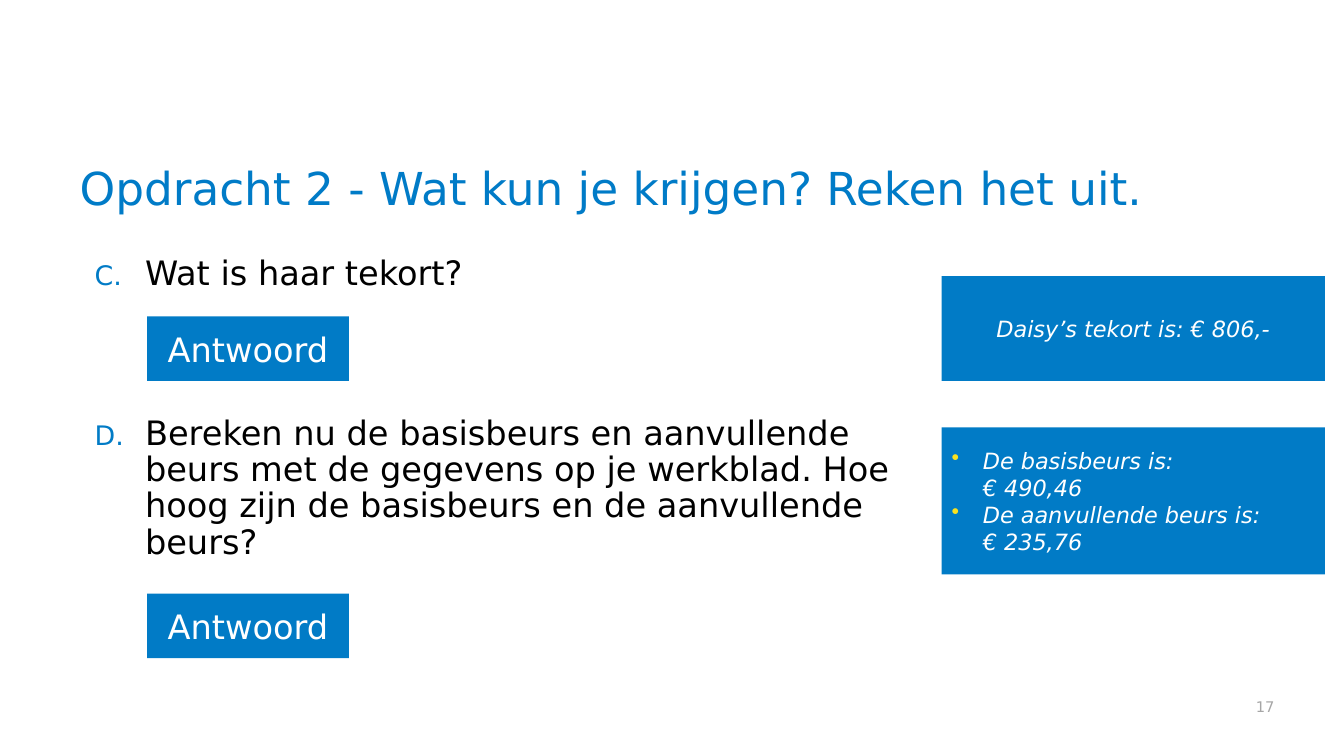
from dataclasses import dataclass

from lxml import etree
from pptx import Presentation
from pptx import util as u
from pptx.dml.color import RGBColor
from pptx.enum import shapes, text
from pptx.oxml.ns import qn

PX = 9144  # EMU per px, 100 px to the inch
FONT = "DejaVu Sans"
COLORS = {
    "title": "007BC7",
    "blue": "017BC6",
    "yellow": "F9E11E",
    "black": "000000",
    "white": "FFFFFF",
    "gray": "A6A6A6",
}
MID = text.PP_ALIGN.CENTER
LEFT = text.PP_ALIGN.LEFT


@dataclass
class Box:
    x: int
    y: int
    w: int
    h: int


@dataclass
class Panel:
    box: Box
    lines: list[str]
    size: int
    italic: bool = False
    bullet: bool = False


PANELS = [
    Panel(Box(146, 314, 200, 64), ["Antwoord"], 24),
    Panel(Box(146, 589, 200, 64), ["Antwoord"], 24),
    Panel(Box(934, 424, 380, 146),
          ["De basisbeurs is:\n€ 490,46", "De aanvullende beurs is:\n€ 235,76"],
          16, italic=True, bullet=True),
    Panel(Box(934, 274, 380, 104), ["Daisy’s tekort is: € 806,-"], 16, italic=True),
]
ASKS = [
    "Wat is haar tekort?",
    "Bereken nu de basisbeurs en aanvullende beurs met de gegevens op je werkblad. "
    "Hoe hoog zijn de basisbeurs en de aanvullende beurs?",
]


def place(box: Box) -> list[int]:
    return [n * PX for n in (box.x, box.y, box.w, box.h)]


def style(para, size: float, color: str, align=LEFT, italic: bool = False) -> None:
    para.alignment = align
    font = para.font
    font.name, font.size, font.italic = FONT, u.Pt(size), italic
    font.color.rgb = RGBColor.from_string(COLORS[color])


def mark(para, left: int, hang: int, color: str, tag: str, **attrs: str) -> None:
    """Give a paragraph a hanging indent and a coloured bullet or number."""
    props = para._p.get_or_add_pPr()
    props.set("marL", str(left * PX))
    props.set("indent", str(-hang * PX))
    tint = etree.SubElement(props, qn("a:buClr"))
    etree.SubElement(tint, qn("a:srgbClr")).set("val", COLORS[color])
    if tag == "a:buAutoNum":
        etree.SubElement(props, qn("a:buSzPct")).set("val", "80000")
    etree.SubElement(props, qn(tag), attrs)


def fill(frame, lines: list[str]) -> list:
    """Write one paragraph per line and return the paragraphs."""
    frame.word_wrap = True
    for _ in lines[1:]:
        frame.add_paragraph()
    for para, line in zip(frame.paragraphs, lines):
        para.text = line
    return list(frame.paragraphs)


def draw(slide, panel: Panel) -> None:
    shape = slide.shapes.add_shape(shapes.MSO_SHAPE.RECTANGLE, *place(panel.box))
    shape.shadow.inherit = False
    shape.fill.solid()
    shape.fill.fore_color.rgb = RGBColor.from_string(COLORS["blue"])
    shape.line.fill.background()
    shape.text_frame.vertical_anchor = text.MSO_ANCHOR.MIDDLE
    for para in fill(shape.text_frame, panel.lines):
        if panel.bullet:
            mark(para, 31, 31, "yellow", "a:buChar", char="•")
        style(para, panel.size, "white", LEFT if panel.bullet else MID, panel.italic)


def main() -> None:
    deck = Presentation()
    deck.slide_width, deck.slide_height = 1333 * PX, 750 * PX
    slide = deck.slides.add_slide(deck.slide_layouts[5])

    # Title
    title = slide.shapes.title
    title.left, title.top, title.width, title.height = place(Box(69, 115, 1195, 104))
    frame = title.text_frame
    frame.auto_size = text.MSO_AUTO_SIZE.NONE
    frame.vertical_anchor = text.MSO_ANCHOR.BOTTOM
    head = fill(frame, ["Opdracht 2 - Wat kun je krijgen? Reken het uit."])[0]
    head.line_spacing = 0.9
    style(head, 32.4, "title")

    # Questions C and D, with room for the answer button between them
    body = slide.shapes.add_textbox(*place(Box(69, 250, 836, 430)))
    asks = fill(body.text_frame, ASKS)
    for para in asks:
        mark(para, 65, 50, "blue", "a:buAutoNum", type="alphaUcPeriod", startAt="3")
        para.line_spacing = 0.9
        style(para, 24, "black")
    asks[1].space_before = u.Pt(88)

    # Answer buttons and answers
    for panel in PANELS:
        draw(slide, panel)

    # Page number
    foot = slide.shapes.add_textbox(*place(Box(717, 680, 547, 35))).text_frame
    foot.margin_right = 0
    foot.vertical_anchor = text.MSO_ANCHOR.BOTTOM
    style(fill(foot, ["17"])[0], 10.5, "gray", text.PP_ALIGN.RIGHT)

    deck.save("out.pptx")


if __name__ == "__main__":
    main()
